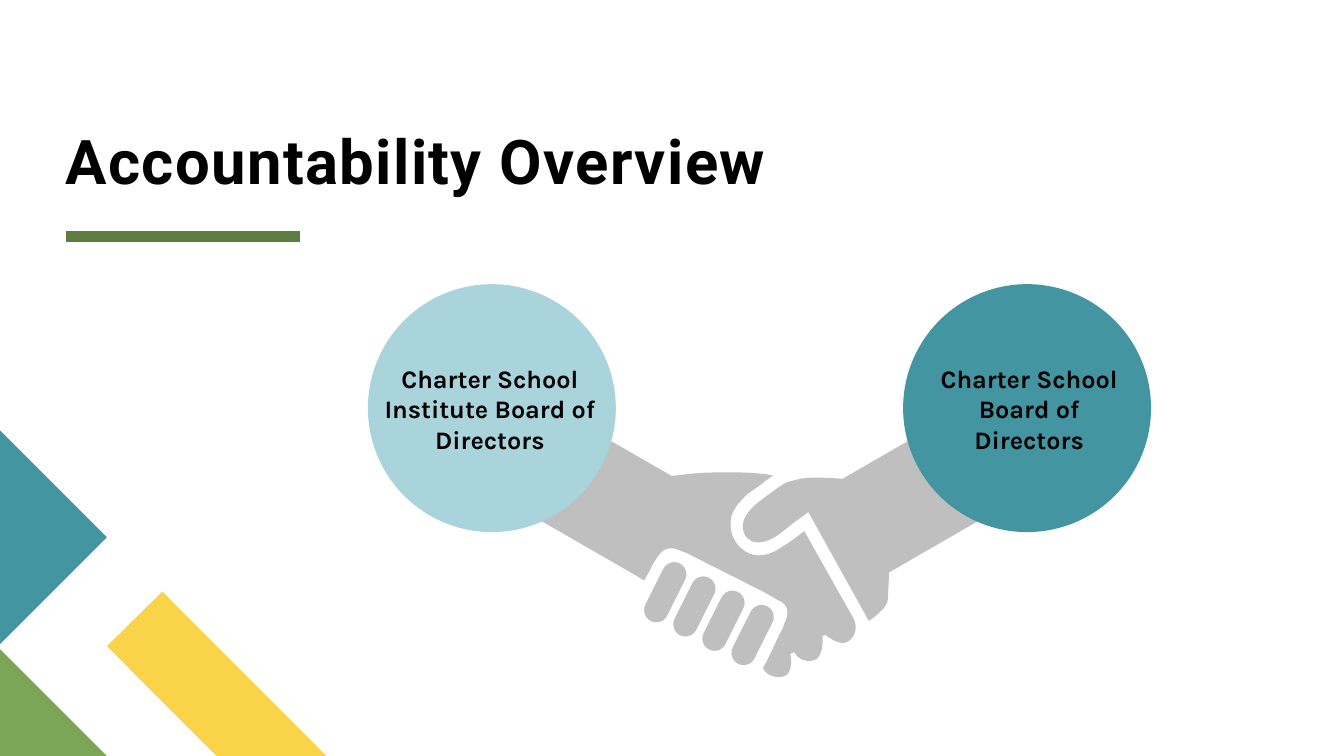
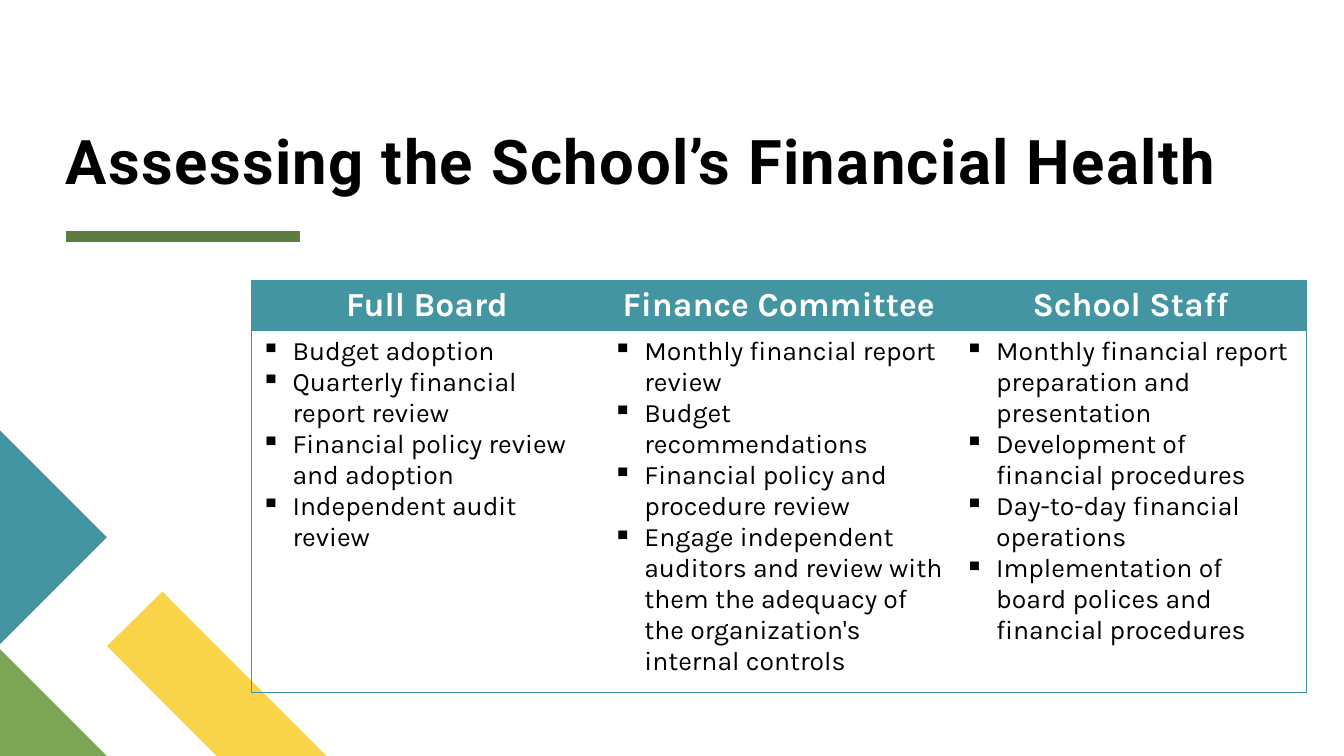
import pptx
import pptx.util
import pptx.dml.color
import pptx.enum.shapes
import pptx.enum.text
import pptx.oxml.ns
from lxml import etree

Pt = pptx.util.Pt
qn = pptx.oxml.ns.qn
Kind = pptx.enum.shapes.MSO_SHAPE
Align = pptx.enum.text.PP_ALIGN
Anchor = pptx.enum.text.MSO_ANCHOR

COLORS = {
    "black": "000000",
    "white": "FFFFFF",
    "teal": "4495A2",
    "pale": "A9D4DB",
    "lime": "7CA655",
    "moss": "5D7D40",
    "gold": "F9D448",
    "gray": "BFBFBF",
}

CORNER = [
    ("gold", [(233.2, 540), (154.8, 540), (76.4, 461.6), (116, 422.6)]),
    ("lime", [(76.4, 540), (0, 540), (0, 463.6)]),
    ("teal", [(0, 307.4), (76.4, 383.8), (0, 460.2)]),
]

# Outlines in units of 0.72 pt: a pair is a corner, six numbers are a curve.
UNIT = 0.72
LEFT_ARM = [
    (400, 438), (631, 571), (639, 576),
    (642, 571, 645, 566, 647, 561), (650, 556, 653, 551, 657, 547),
    (660, 545, 663, 544, 666, 544), (669, 544, 672, 545, 674, 546),
    (677, 547, 679, 548, 682, 549), (761, 589),
    (764, 591, 768, 593, 771, 595), (776, 597, 780, 600, 781, 605),
    (782, 610, 780, 615, 778, 619), (777, 623, 775, 627, 773, 630),
    (768, 641, 763, 652, 757, 663), (761, 671, 772, 674, 780, 670),
    (785, 666, 786, 657, 784, 649), (788, 647),
    (792, 655, 802, 658, 810, 654), (815, 650, 817, 640, 816, 631),
    (819, 630), (825, 635, 835, 640, 840, 637),
    (849, 633, 851, 622, 847, 614), (798, 527),
    (790, 533, 781, 540, 772, 545), (768, 548, 760, 551, 753, 551),
    (747, 551, 742, 549, 738, 546), (729, 540, 724, 529, 725, 518),
    (725, 512, 727, 508, 729, 505), (731, 501, 734, 498, 737, 495),
    (741, 490, 746, 487, 752, 483), (757, 479, 762, 475, 767, 472),
    (761, 469, 705, 466, 670, 472), (668, 472, 667, 472, 666, 472),
    (607, 438),
]
RIGHT_ARM = [
    (900, 438), (836, 475), (835, 475),
    (822, 474, 806, 473, 794, 475), (790, 476, 786, 477, 782, 478),
    (777, 480, 773, 483, 769, 486), (762, 491, 755, 496, 749, 501),
    (746, 504, 744, 506, 742, 509), (740, 511, 739, 514, 738, 516),
    (736, 523, 737, 531, 743, 535), (748, 539, 755, 539, 762, 536),
    (771, 533, 779, 525, 787, 519), (792, 515, 797, 512, 802, 508),
    (862, 616), (867, 613, 881, 602, 881, 594),
    (881, 586, 882, 577, 882, 568), (1107, 438),
]

DUTIES = {
    "Full Board": [
        "Budget adoption",
        "Quarterly financial report review",
        "Financial policy review and adoption",
        "Independent audit review",
    ],
    "Finance Committee": [
        "Monthly financial report review",
        "Budget recommendations",
        "Financial policy and procedure review",
        "Engage independent auditors and review with them the adequacy "
        "of the organization's internal controls",
    ],
    "School Staff": [
        "Monthly financial report preparation and presentation",
        "Development of financial procedures",
        "Day-to-day financial operations",
        "Implementation of board polices and financial procedures",
    ],
}


def flatten(steps, parts=8):
    """Turn corners and cubic curves into a list of points, in pt."""
    points = []
    for step in steps:
        if len(step) == 2:
            points.append(step)
            continue
        ends = [points[-1], step[:2], step[2:4], step[4:]]
        for i in range(1, parts + 1):
            t = i / parts
            s = 1 - t
            mix = (s ** 3, 3 * s * s * t, 3 * s * t * t, t ** 3)
            points.append(tuple(
                sum(m * end[axis] for m, end in zip(mix, ends))
                for axis in (0, 1)))
    return [(x * UNIT, y * UNIT) for x, y in points]


class Deck:
    head = "Roboto"
    body = "Karla"

    def __init__(self):
        self.file = pptx.Presentation()
        self.file.slide_width = Pt(960)
        self.file.slide_height = Pt(540)
        self.slide = None

    def rgb(self, name):
        return pptx.dml.color.RGBColor.from_string(COLORS[name])

    def start(self, title):
        """Open a slide with its title, rule and corner."""
        self.slide = self.file.slides.add_slide(self.file.slide_layouts[6])
        self.rule(46.8, 169.2, 214.6)
        for color, points in CORNER:
            self.trace(points, color)
        box = self.box(46.8, 8, 856, 132.4, Anchor.BOTTOM)
        para = box.paragraphs[0]
        para.line_spacing = 0.8
        run = self.run(para, title, 44, bold=True, face=self.head)
        run.font._element.set("spc", "100")

    def run(self, para, text, size, color="black", bold=False, face=None):
        run = para.add_run()
        run.text = text
        run.font.name = face or self.body
        run.font.size = Pt(size)
        run.font.bold = bold
        run.font.color.rgb = self.rgb(color)
        return run

    def box(self, x, y, w, h, anchor, side=0, edge=0):
        shape = self.slide.shapes.add_textbox(Pt(x), Pt(y), Pt(w), Pt(h))
        frame = shape.text_frame
        frame.word_wrap = True
        frame.vertical_anchor = anchor
        frame.margin_left = frame.margin_right = Pt(side)
        frame.margin_top = frame.margin_bottom = Pt(edge)
        return frame

    def label(self, text, x, y, w, h):
        para = self.box(x, y, w, h, Anchor.MIDDLE, 2.9, 1.4).paragraphs[0]
        para.alignment = Align.CENTER
        self.run(para, text, 18, bold=True)

    def rule(self, left, y, right):
        line = self.slide.shapes.add_connector(
            pptx.enum.shapes.MSO_CONNECTOR.STRAIGHT,
            Pt(left), Pt(y), Pt(right), Pt(y))
        line.line.color.rgb = self.rgb("moss")
        line.line.width = Pt(8)
        etree.SubElement(line._element.spPr, qn("a:effectLst"))

    def paint(self, shape, color):
        shape.shadow.inherit = False
        shape.fill.solid()
        shape.fill.fore_color.rgb = self.rgb(color)
        shape.line.fill.background()

    def trace(self, points, color):
        """Draw a closed outline through points given in pt."""
        spots = [(Pt(x), Pt(y)) for x, y in points]
        pen = self.slide.shapes.build_freeform(*spots[0])
        pen.add_line_segments(spots[1:], close=True)
        self.paint(pen.convert_to_shape(), color)

    def shape(self, kind, x, y, w, h, color):
        shape = self.slide.shapes.add_shape(kind, Pt(x), Pt(y), Pt(w), Pt(h))
        self.paint(shape, color)
        return shape

    def finger(self, x, y, w, h):
        """Draw a slanted capsule centred on x, y."""
        shape = self.shape(Kind.ROUNDED_RECTANGLE,
                           x - w / 2, y - h / 2, w, h, "gray")
        shape.adjustments[0] = 0.5
        shape.rotation = 26.6

    def edges(self, cell, sides):
        """Line the named sides of a cell and clear the others."""
        props = cell._tc.get_or_add_tcPr()
        for side in "LRTB":
            line = etree.SubElement(props, qn("a:ln" + side))
            if side in sides:
                line.set("w", str(Pt(0.5)))
                fill = etree.SubElement(line, qn("a:solidFill"))
                etree.SubElement(fill, qn("a:srgbClr")).set(
                    "val", COLORS["teal"])
            else:
                etree.SubElement(line, qn("a:noFill"))

    def bullet(self, para):
        props = para._p.get_or_add_pPr()
        props.set("marL", str(Pt(22.5)))
        props.set("indent", str(-Pt(22.5)))
        etree.SubElement(props, qn("a:buChar")).set("char", "▪")

    def table(self, data, x, y, width, rows):
        grid = self.slide.shapes.add_table(
            2, len(data), Pt(x), Pt(y),
            Pt(width * len(data)), Pt(sum(rows))).table
        grid.first_row = grid.horz_banding = False
        for row, height in zip(grid.rows, rows):
            row.height = Pt(height)
        last = len(data) - 1
        for i, (name, items) in enumerate(data.items()):
            grid.columns[i].width = Pt(width)
            sides = ("L" if i == 0 else "") + ("R" if i == last else "")
            top, low = grid.cell(0, i), grid.cell(1, i)
            self.edges(top, sides + "TB")
            self.edges(low, sides + "TB")
            top.fill.solid()
            top.fill.fore_color.rgb = self.rgb("teal")
            low.fill.background()
            para = top.text_frame.paragraphs[0]
            para.alignment = Align.CENTER
            self.run(para, name, 24, "white", bold=True)
            frame = low.text_frame
            for j, item in enumerate(items):
                para = frame.add_paragraph() if j else frame.paragraphs[0]
                self.bullet(para)
                self.run(para, item, 19)


def main():
    deck = Deck()

    deck.start("Accountability Overview")
    for arm in (LEFT_ARM, RIGHT_ARM):
        deck.trace(flatten(arm), "gray")
    for i in range(4):
        deck.finger(475.2 + 20.8 * i, 423 + 10.2 * i, 17.4, 46)
    for x, color in ((262.8, "pale"), (645.1, "teal")):
        deck.shape(Kind.OVAL, x, 203, 177.1, 177.1, color)
    deck.label("Charter School Institute Board of Directors",
               261.4, 257.8, 177.1, 68.4)
    deck.label("Charter School Board of Directors",
               662.4, 257.8, 145.4, 68.4)

    deck.start("Assessing the School’s Financial Health")
    deck.table(DUTIES, 179.3, 200.2, 251.3, (35.2, 251.2))

    deck.file.save("out.pptx")


if __name__ == "__main__":
    main()
